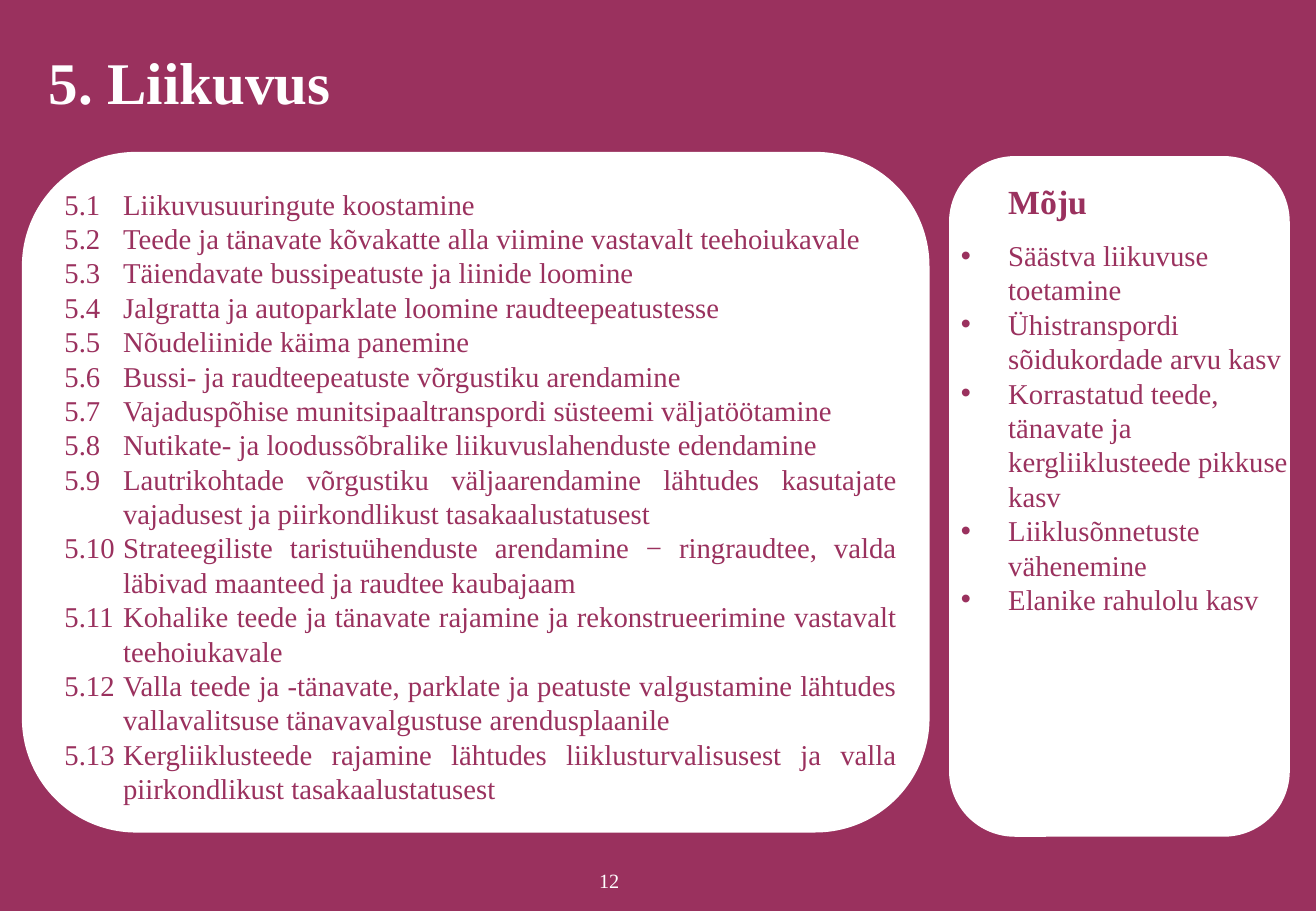
"""Build the mobility slide: numbered actions on the left, their impact on the right."""
from lxml import etree
from pptx import Presentation
from pptx.dml.color import RGBColor
from pptx.enum import shapes, text
from pptx.oxml import ns
from pptx.util import Pt

PLUM = RGBColor(0x9A, 0x31, 0x5E)
WHITE = RGBColor(0xFF, 0xFF, 0xFF)
FONT = "Times New Roman"
MID = text.MSO_ANCHOR.MIDDLE
TOP = text.MSO_ANCHOR.TOP

tasks = [
    "Liikuvusuuringute koostamine",
    "Teede ja tänavate kõvakatte alla viimine vastavalt teehoiukavale",
    "Täiendavate bussipeatuste ja liinide loomine",
    "Jalgratta ja autoparklate loomine raudteepeatustesse",
    "Nõudeliinide käima panemine",
    "Bussi- ja raudteepeatuste võrgustiku arendamine",
    "Vajaduspõhise munitsipaaltranspordi süsteemi väljatöötamine",
    "Nutikate- ja loodussõbralike liikuvuslahenduste edendamine",
    "Lautrikohtade võrgustiku väljaarendamine lähtudes kasutajate "
    "vajadusest ja piirkondlikust tasakaalustatusest",
    "Strateegiliste taristuühenduste arendamine − ringraudtee, valda "
    "läbivad maanteed ja raudtee kaubajaam",
    "Kohalike teede ja tänavate rajamine ja rekonstrueerimine vastavalt teehoiukavale",
    "Valla teede ja -tänavate, parklate ja peatuste valgustamine lähtudes "
    "vallavalitsuse tänavavalgustuse arendusplaanile",
    "Kergliiklusteede rajamine lähtudes liiklusturvalisusest ja valla "
    "piirkondlikust tasakaalustatusest",
]
gains = [
    "Säästva liikuvuse toetamine",
    "Ühistranspordi sõidukordade arvu kasv",
    "Korrastatud teede, tänavate ja kergliiklusteede pikkuse kasv",
    "Liiklusõnnetuste vähenemine",
    "Elanike rahulolu kasv",
]

deck = Presentation()
deck.slide_width, deck.slide_height = Pt(780), Pt(540)
slide = deck.slides.add_slide(deck.slide_layouts[6])
slide.background.fill.solid()
slide.background.fill.fore_color.rgb = PLUM


def add_box(left, top, width, height, anchor, wrap=True):
    frame = slide.shapes.add_textbox(Pt(left), Pt(top), Pt(width), Pt(height)).text_frame
    frame.margin_left = frame.margin_right = Pt(3.6)
    frame.margin_top = frame.margin_bottom = Pt(3.6)
    frame.vertical_anchor = anchor
    frame.word_wrap = wrap
    return frame


def add_line(frame, words, size, color, bold=False, left=0, hang=0):
    para = frame.paragraphs[0]
    if para.runs:
        para = frame.add_paragraph()
    para.text = words
    para.font.name, para.font.size = FONT, Pt(size)
    para.font.bold, para.font.color.rgb = bold, color
    para.line_spacing = Pt(size * 1.2)
    props = para._p.get_or_add_pPr()
    props.set("marL", str(Pt(left)))
    props.set("indent", str(Pt(-hang)))
    return para


for left, top, width, curve in [(13.5, 90.5, 537, 0.167), (563, 93, 201, 0.192)]:
    card = slide.shapes.add_shape(
        shapes.MSO_SHAPE.ROUNDED_RECTANGLE, Pt(left), Pt(top), Pt(width), Pt(402.5))
    card.adjustments[0] = curve
    card.shadow.inherit = False
    card.fill.solid()
    card.fill.fore_color.rgb = WHITE
    card.line.color.rgb = WHITE
    card.line.width = Pt(1)

title = add_box(25.2, 28.8, 705.6, 43.2, MID)
add_line(title, "5. Liikuvus", 35, WHITE, bold=True).line_spacing = 0.9

plan = add_box(34.6, 107, 501, 380, TOP)
for num, task in enumerate(tasks, 1):
    para = add_line(plan, f"5.{num}\t{task}", 17, PLUM, left=34.8, hang=34.8)
    para.alignment = text.PP_ALIGN.JUSTIFY

impact = add_box(566, 103.5, 201, 268, TOP)
add_line(impact, "Mõju", 20, PLUM, bold=True, left=28).space_after = Pt(10)
for gain in gains:
    para = add_line(impact, gain, 17, PLUM, left=28, hang=28)
    props = para._p.get_or_add_pPr()
    etree.SubElement(props, ns.qn("a:buFont")).set("typeface", "Arial")
    etree.SubElement(props, ns.qn("a:buChar")).set("char", "•")
    for tag in ("a:defRPr",):
        props.append(props.find(ns.qn(tag)))

page = add_box(351.4, 511.2, 19.4, 21.6, MID, wrap=False)
add_line(page, "12", 12, WHITE).alignment = text.PP_ALIGN.CENTER

deck.save("out.pptx")
